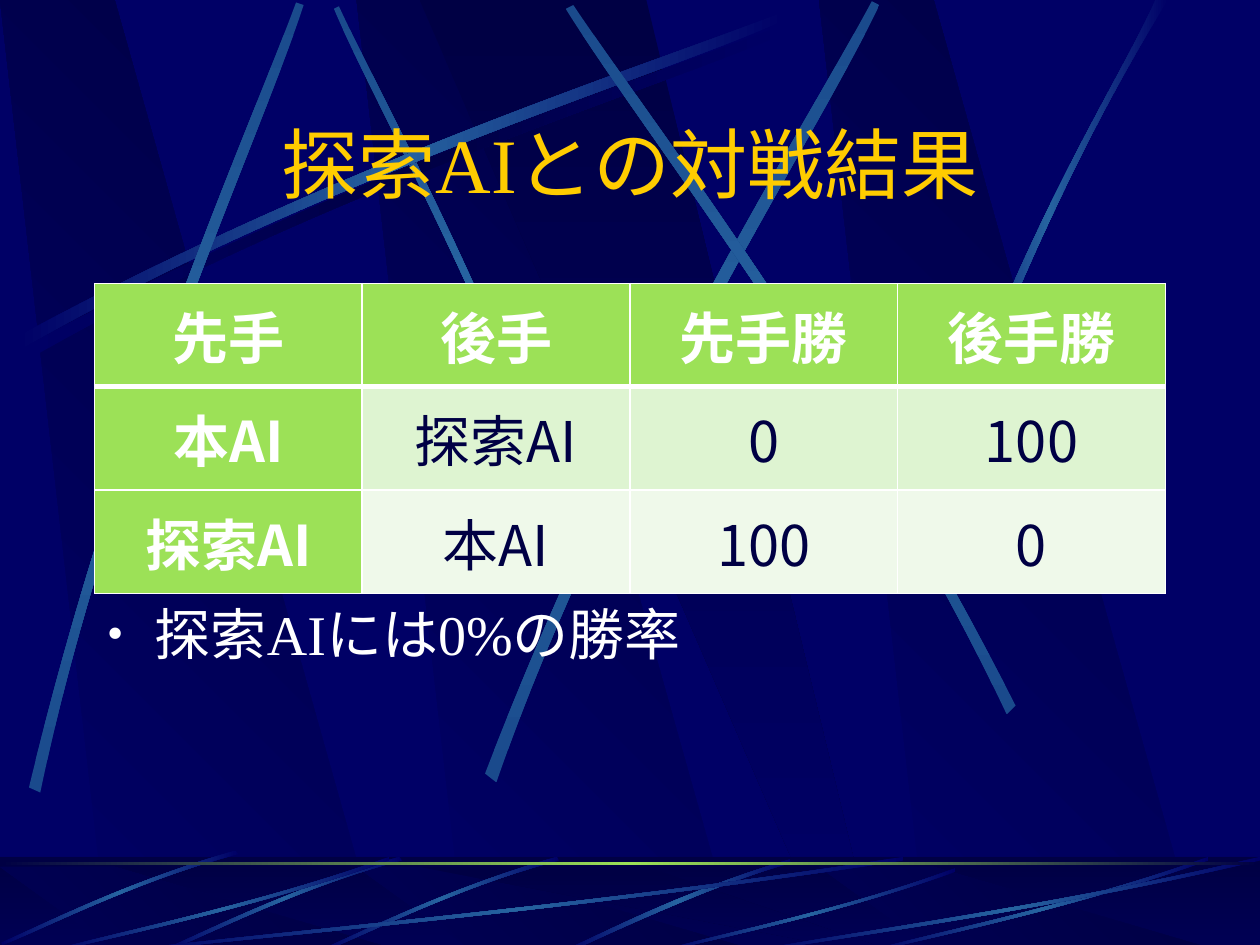
from dataclasses import dataclass

from pptx import Presentation
from pptx.dml.color import RGBColor
from pptx.enum.shapes import MSO_SHAPE
from pptx.enum.text import MSO_ANCHOR, PP_ALIGN
from pptx.oxml import parse_xml
from pptx.oxml.ns import nsdecls, qn
from pptx.util import Inches, Pt

RECT = MSO_SHAPE.RECTANGLE
MIDDLE = MSO_ANCHOR.MIDDLE
CENTER = PP_ALIGN.CENTER
LEFT = PP_ALIGN.LEFT


@dataclass(frozen=True)
class Theme:
    navy: str = "000066"
    dark: str = "000044"
    beam: str = "2663A0"
    dim: str = "1A4A8C"
    gold: str = "FFCC00"
    white: str = "FFFFFF"
    green: str = "9CE157"
    bands: tuple = ("DEF4D1", "EFF9EA")
    serif: str = "Times New Roman"
    sans: str = "Noto Sans CJK JP"
    title: int = 44
    body: int = 32


T = Theme()
COLS, ROWS = 1000, 750
UNIT = Inches(10) // COLS
FLOOR = 680
GLOW = (T.navy, T.beam, T.navy)
SHADE = (T.navy, T.dark, T.navy)
SOFT = (T.dim, T.beam, T.dim)

LONG = [(14, 267), (278, 125), (518, 51), (620, 10),
        (623, 16), (522, 61), (248, 143), (17, 277)]
STEEP = [
    [(460, 436), (391, 234), (302, 77), (269, 5),
     (265, 7), (295, 79), (398, 258), (454, 439)],
    [(23, 625), (93, 334), (197, 105), (235, 2),
     (241, 4), (207, 109), (86, 368), (32, 629)],
    [(385, 614), (498, 320), (638, 102), (692, 1),
     (698, 4), (649, 108), (486, 355), (394, 621)],
    [(806, 560), (670, 293), (516, 95), (455, 4),
     (449, 7), (507, 101), (685, 325), (799, 567)],
]
EDGE = [(738, 394), (814, 173), (888, 66), (917, 0),
        (927, 0), (836, 145), (769, 322), (744, 397)]
ARC = [(627, 682), (537, 709), (477, 742), (448, 754),
       (453, 755), (490, 738), (571, 700), (628, 685)]
SHORT = [(442, 680), (355, 705), (287, 740), (256, 753),
         (257, 755), (288, 743), (365, 703), (444, 683)]
SWEEP = [(1, .04), (.57, .57), (.17, .85), (.01, 1),
         (0, .99), (.17, .81), (.61, .51), (1, 0)]
SWEEPS = [(100, 680, 617, 75), (42, 680, 267, 75), (527, 689, 231, 66),
          (692, 680, 267, 75), (600, 680, 400, 75)]


def grid(*cells):
    return [round(c * UNIT) for c in cells]


def color(code):
    return RGBColor.from_string(code)


def paint(shape, codes, angle=0, alpha=100):
    tones = [f'<a:srgbClr val="{c}"><a:alpha val="{alpha * 1000}"/></a:srgbClr>'
             for c in codes]
    if len(tones) == 1:
        xml = f'<a:solidFill {nsdecls("a")}>{tones[0]}</a:solidFill>'
    else:
        step = 100000 // (len(tones) - 1)
        stops = "".join(f'<a:gs pos="{i * step}">{t}</a:gs>'
                        for i, t in enumerate(tones))
        xml = (f'<a:gradFill {nsdecls("a")} rotWithShape="1"><a:gsLst>{stops}'
               f'</a:gsLst><a:lin ang="{angle * 60000}" scaled="0"/></a:gradFill>')
    shape.line.fill.background()
    shape._element.spPr.insert(2, parse_xml(xml))
    shape.shadow.inherit = False


def block(slide, box, codes, angle=0, alpha=100):
    paint(slide.shapes.add_shape(RECT, *grid(*box)), codes, angle, alpha)


def outline(slide, points, codes, angle=0):
    pen = slide.shapes.build_freeform(*points[0], scale=UNIT)
    pen.add_line_segments(points[1:], close=True)
    shape = pen.convert_to_shape()
    paint(shape, codes, angle)
    return shape


def bend(lines):
    arc = parse_xml(f'<a:cubicBezTo {nsdecls("a")}/>')
    lines[0].addprevious(arc)
    for line in lines:
        arc.append(line[0])
        line.getparent().remove(line)


def streak(slide, points, codes=GLOW, angle=0):
    shape = outline(slide, points, codes, angle)
    lines = list(shape._element.iter(qn("a:lnTo")))
    bend(lines[:3])
    bend(lines[4:])


def shift(points, right, down=0):
    return [(x + right, y + down) for x, y in points]


def fit(points, left, top, width, height):
    return [(left + x * width, top + y * height) for x, y in points]


def shafts(slide, top):
    end = ROWS
    for left in (283, 0, 650):
        shaft = [(86, end), (302, end), (91, top), (0, top)]
        outline(slide, shift(shaft, left), (T.navy, T.dark), 315)
    wedge = [(333, top), (658, end), (694, end), (513, top)]
    outline(slide, wedge, (T.dark, T.navy), 90)


def scene(slide):
    shafts(slide, 0)
    streak(slide, shift(LONG, 6, 8), SHADE)
    streak(slide, STEEP[0], SOFT, 90)
    streak(slide, LONG)
    for points in STEEP[1:]:
        streak(slide, points, SOFT, 90)
    streak(slide, EDGE)


def floor(slide):
    band = (0, FLOOR, COLS, ROWS - FLOOR)
    block(slide, band, (T.dark, T.navy), 90)
    shafts(slide, 688)
    block(slide, band, (T.dark,), alpha=50)
    streak(slide, ARC)
    for right, down in ((0, 0), (-125, 0), (-255, -5)):
        streak(slide, shift(SHORT, right, down))
    for box in SWEEPS:
        streak(slide, fit(SWEEP, *box))
    block(slide, (0, 684, COLS, 2.4), (T.dark, T.green, T.dark))


def style(para, face, size, code, bold=False, align=CENTER):
    para.alignment = align
    for run in para.runs:
        font = run.font
        font.name, font.size, font.bold = face, Pt(size), bold
        font.color.rgb = color(code)
        font._element.append(parse_xml(
            f'<a:ea {nsdecls("a")} typeface="{T.sans}"/>'))


def label(slide, box, text):
    frame = slide.shapes.add_textbox(*grid(*box)).text_frame
    frame.word_wrap = True
    frame.text = text
    return frame


def bullet(para):
    props = para._p.get_or_add_pPr()
    props.set("marL", str(Inches(.38)))
    props.set("indent", str(-Inches(.38)))
    for tag in ('buSzPct {} val="85000"',
                f'buFont {{}} typeface="{T.serif}"', 'buChar {} char="•"'):
        props.append(parse_xml(f'<a:{tag.format(nsdecls("a"))}/>'))


def border(cell, head):
    props = cell._tc.get_or_add_tcPr()
    for spot, side in enumerate("LRTB"):
        width = Pt(3 if head and side == "B" else 1)
        props.insert(spot, parse_xml(
            f'<a:ln{side} {nsdecls("a")} w="{width}"><a:solidFill>'
            f'<a:srgbClr val="{T.white}"/></a:solidFill></a:ln{side}>'))


def table(slide, box, rows):
    sheet = slide.shapes.add_table(len(rows), len(rows[0]), *grid(*box)).table
    for r, row in enumerate(rows):
        for c, text in enumerate(row):
            cell = sheet.cell(r, c)
            key = r == 0 or c == 0
            cell.text = text
            cell.vertical_anchor = MIDDLE
            cell.margin_left = cell.margin_right = Inches(.07)
            cell.margin_top = cell.margin_bottom = 0
            cell.fill.solid()
            cell.fill.fore_color.rgb = color(T.green if key else T.bands[r - 1])
            border(cell, r == 0)
            style(cell.text_frame.paragraphs[0], T.sans, T.body,
                  T.white if key else T.dark, key)


def main():
    deck = Presentation()
    deck.slide_width, deck.slide_height = grid(COLS, ROWS)
    slide = deck.slides.add_slide(deck.slide_layouts[6])
    slide.background.fill.solid()
    slide.background.fill.fore_color.rgb = color(T.navy)
    scene(slide)
    floor(slide)
    title = label(slide, (75, 87, 850, 84), "探索AIとの対戦結果")
    title.vertical_anchor = MIDDLE
    style(title.paragraphs[0], T.serif, T.title, T.gold)
    note = label(slide, (75, 471, 850, 196), "探索AIには0%の勝率").paragraphs[0]
    bullet(note)
    style(note, T.serif, T.body, T.white, align=LEFT)
    table(slide, (75, 225, 850, 246), [
        ("先手", "後手", "先手勝", "後手勝"),
        ("本AI", "探索AI", "0", "100"),
        ("探索AI", "本AI", "100", "0"),
    ])
    deck.save("out.pptx")


if __name__ == "__main__":
    main()
